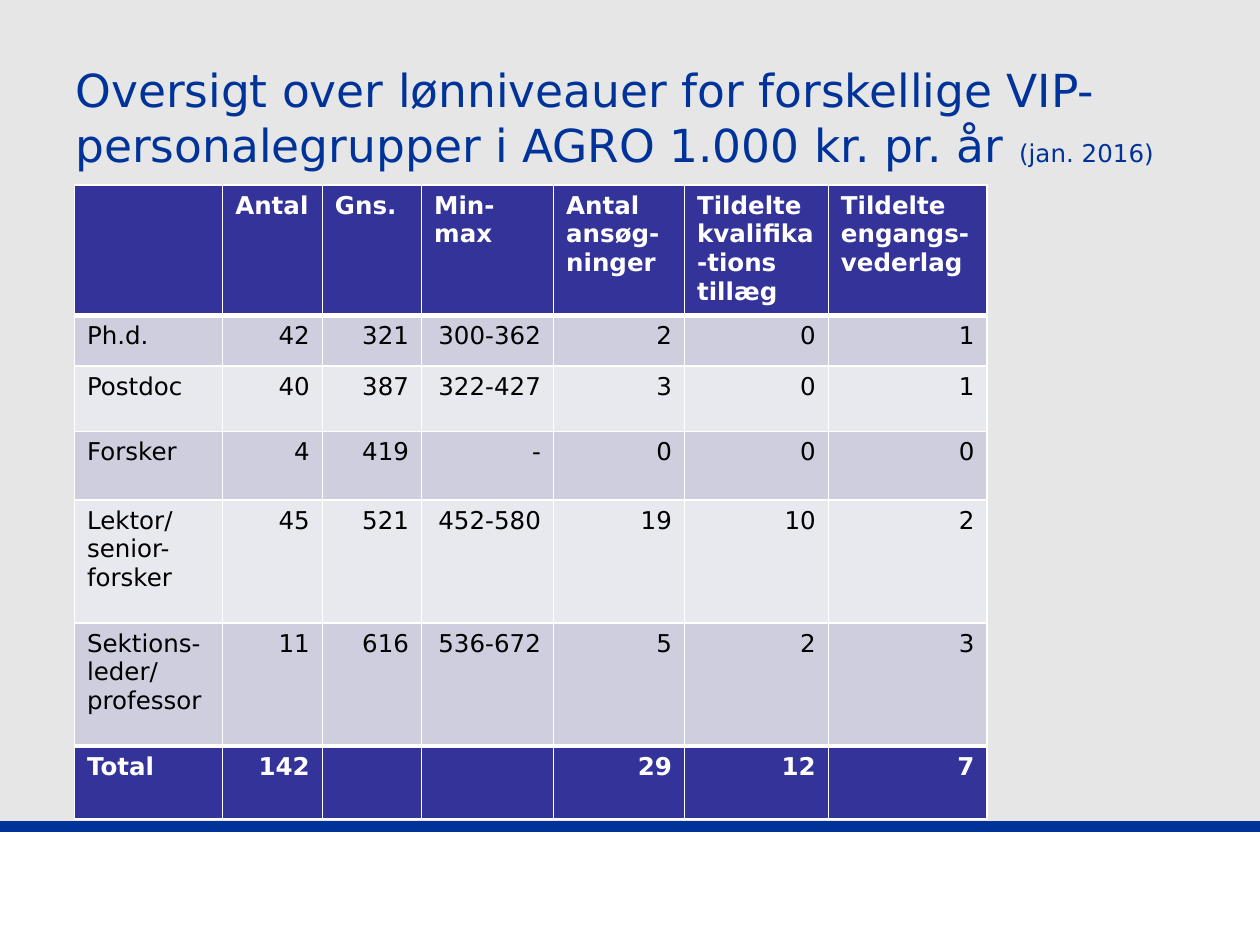
"""Build a slide with a table of pay levels by staff group."""
from lxml import etree
from pptx import Presentation
from pptx.dml.color import RGBColor
from pptx.enum.shapes import MSO_CONNECTOR, MSO_SHAPE
from pptx.enum.text import MSO_ANCHOR, PP_ALIGN
from pptx.oxml.ns import qn
from pptx.util import Cm, Pt

LINE = MSO_CONNECTOR.STRAIGHT
RECT = MSO_SHAPE.RECTANGLE
MIDDLE = MSO_ANCHOR.MIDDLE
LEFT, RIGHT = PP_ALIGN.LEFT, PP_ALIGN.RIGHT

GREY = RGBColor(0xE6, 0xE6, 0xE6)
BLUE = RGBColor(0x00, 0x33, 0x99)
INDIGO = RGBColor(0x33, 0x33, 0x99)
DARK = RGBColor(0xCE, 0xCE, 0xDE)
LIGHT = RGBColor(0xE8, 0xE8, 0xEF)
WHITE = RGBColor(0xFF, 0xFF, 0xFF)
BLACK = RGBColor(0x00, 0x00, 0x00)
FONT = "DejaVu Sans"

TITLE = "Oversigt over lønniveauer for forskellige VIP-personalegrupper i AGRO 1.000 kr. pr. år "
DATE = "(jan. 2016)"
ROWS = [
    ("", "Antal", "Gns.", "Min-max", "Antal ansøg-ninger",
     "Tildelte kvalifika-tions tillæg", "Tildelte engangs-vederlag"),
    ("Ph.d.", "42", "321", "300-362", "2", "0", "1"),
    ("Postdoc", "40", "387", "322-427", "3", "0", "1"),
    ("Forsker", "4", "419", "-", "0", "0", "0"),
    ("Lektor/ senior-forsker", "45", "521", "452-580", "19", "10", "2"),
    ("Sektions-leder/ professor", "11", "616", "536-672", "5", "2", "3"),
    ("Total", "142", "", "", "29", "12", "7"),
]
WIDTHS = [2.99, 2.01, 2, 2.66, 2.64, 2.9, 3.2]
HEIGHTS = [2.56, 1.02, 1.32, 1.38, 2.48, 2.48, 1.47]
WIDE, HIGH, FOOT = 25.4, 19.05, 16.66


def style(font, size, color, bold=False):
    font.name, font.size, font.bold = FONT, Pt(size), bold
    font.color.rgb = color


def edge(cell, side, width):
    props = cell._tc.get_or_add_tcPr()
    line = etree.SubElement(props, qn(f"a:ln{side}"), w=str(Pt(width)))
    fill = etree.SubElement(line, qn("a:solidFill"))
    etree.SubElement(fill, qn("a:srgbClr"), val=str(WHITE))


def add_foot(slide):
    band = slide.shapes.add_shape(RECT, 0, Cm(FOOT), Cm(WIDE), Cm(HIGH - FOOT))
    band.shadow.inherit = False
    band.fill.solid()
    band.fill.fore_color.rgb = WHITE
    band.line.fill.background()
    rule = slide.shapes.add_connector(LINE, 0, Cm(FOOT), Cm(WIDE), Cm(FOOT))
    rule.line.color.rgb = BLUE
    rule.line.width = Pt(6)
    etree.SubElement(rule._element.spPr, qn("a:effectLst"))


def add_title(slide):
    box = slide.shapes.add_textbox(Cm(1.27), Cm(0.76), Cm(22.94), Cm(3.18))
    frame = box.text_frame
    frame.word_wrap = True
    frame.vertical_anchor = MIDDLE
    for text, size in ((TITLE, 26), (DATE, 14)):
        run = frame.paragraphs[0].add_run()
        run.text = text
        style(run.font, size, BLUE)


def fill_cell(cell, text, row, col):
    last = len(ROWS) - 1
    strong = row in (0, last)
    for side, width in (("L", 1), ("R", 1),
                        ("T", 3 if row in (1, last) else 1),
                        ("B", 3 if row in (0, last - 1) else 1)):
        edge(cell, side, width)
    cell.fill.solid()
    cell.fill.fore_color.rgb = INDIGO if strong else DARK if row % 2 else LIGHT
    cell.text = text
    para = cell.text_frame.paragraphs[0]
    para.alignment = RIGHT if row and col else LEFT
    style(para.font, 14, WHITE if strong else BLACK, strong)


def add_grid(slide):
    table = slide.shapes.add_table(
        len(ROWS), len(WIDTHS), Cm(1.5), Cm(3.73),
        Cm(sum(WIDTHS)), Cm(sum(HEIGHTS))).table
    for col, width in zip(table.columns, WIDTHS):
        col.width = Cm(width)
    for row, high in zip(table.rows, HEIGHTS):
        row.height = Cm(high)
    for r, texts in enumerate(ROWS):
        for c, text in enumerate(texts):
            fill_cell(table.cell(r, c), text, r, c)


def main():
    deck = Presentation()
    deck.slide_width, deck.slide_height = Cm(WIDE), Cm(HIGH)
    slide = deck.slides.add_slide(deck.slide_layouts[6])
    slide.background.fill.solid()
    slide.background.fill.fore_color.rgb = GREY
    add_foot(slide)
    add_title(slide)
    add_grid(slide)
    deck.save("out.pptx")


if __name__ == "__main__":
    main()
